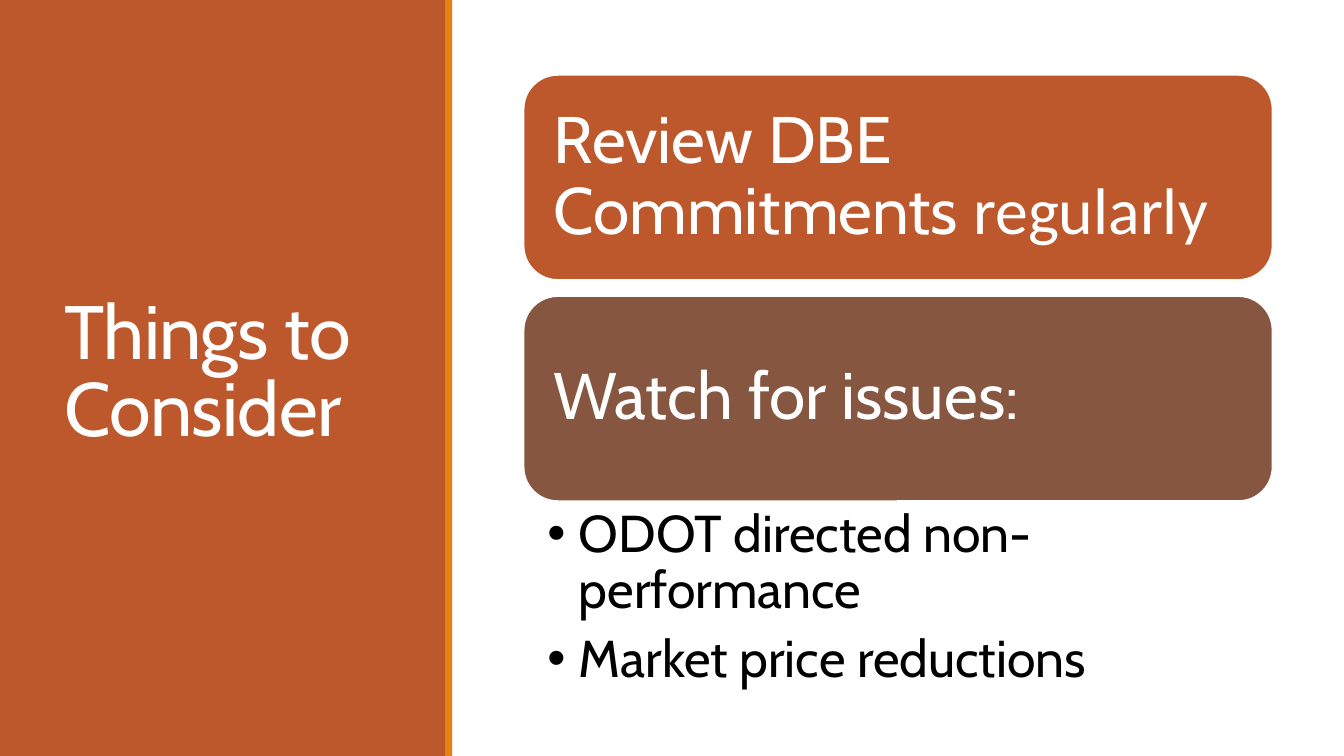
from lxml.etree import SubElement
from pptx import Presentation
from pptx.dml.color import RGBColor
from pptx.enum.shapes import MSO_SHAPE as Shape
from pptx.enum.text import MSO_ANCHOR as Anchor, MSO_AUTO_SIZE as AutoSize, PP_ALIGN as Align
from pptx.oxml.ns import qn
from pptx.util import Pt

TITLE = "Things to Consider"
CARDS = [
    ("BD582C", [("Review DBE Commitments ", "Cabin"), ("regularly", "Calibri")]),
    ("865640", [("Watch for issues:", "Cabin")]),
]
ISSUES = ["ODOT directed non-performance", "Market price reductions"]

SLIDE_WIDTH, SLIDE_HEIGHT = 960, 540
PANEL_WIDTH, STRIPE_LEFT, STRIPE_WIDTH = 319, 318, 5
CARD_LEFT, CARD_TOP, CARD_WIDTH, CARD_HEIGHT = 374, 53.5, 535, 146.5
CARD_PITCH = 158
ISSUES_HEIGHT = 134
INDENT = 22.5


def color(value):
    return RGBColor.from_string(value)


def add_block(slide, kind, box, fill, line=None):
    shape = slide.shapes.add_shape(kind, *map(Pt, box))
    shape.shadow.inherit = False
    shape.fill.solid()
    shape.fill.fore_color.rgb = color(fill)
    if line:
        shape.line.color.rgb = color(line)
        shape.line.width = Pt(1.25)
    else:
        shape.line.fill.background()
    return shape


def set_frame(frame, anchor, insets):
    frame.word_wrap = True
    frame.auto_size = AutoSize.NONE
    frame.vertical_anchor = anchor
    frame.margin_left, frame.margin_top, frame.margin_right, frame.margin_bottom = map(Pt, insets)


def format_run(run, size, fill, name="Cabin"):
    run.font.size = Pt(size)
    run.font.name = name
    run.font.color.rgb = color(fill)


def add_bullet(paragraph):
    properties = paragraph._p.get_or_add_pPr()
    properties.set("marL", str(Pt(INDENT)))
    properties.set("indent", str(-Pt(INDENT)))
    SubElement(properties, qn("a:buFont"), typeface="Arial")
    SubElement(properties, qn("a:buChar"), char="•")


def add_title(slide):
    title = slide.shapes.title
    title.left, title.top, title.width, title.height = map(Pt, (39, 41, 243, 454))
    set_frame(title.text_frame, Anchor.MIDDLE, (7.2, 3.6, 7.2, 3.6))
    title.text_frame.text = TITLE
    paragraph = title.text_frame.paragraphs[0]
    paragraph.alignment = Align.LEFT
    paragraph.line_spacing = 0.85
    run = paragraph.runs[0]
    format_run(run, 54, "FFFFFF")
    run.font._element.set("spc", "-50")
    return title


def add_card(slide, top, fill, parts):
    card = add_block(slide, Shape.ROUNDED_RECTANGLE,
                     (CARD_LEFT, top, CARD_WIDTH, CARD_HEIGHT), fill, "FFFFFF")
    set_frame(card.text_frame, Anchor.MIDDLE, (14.4,) * 4)
    paragraph = card.text_frame.paragraphs[0]
    paragraph.alignment = Align.LEFT
    paragraph.line_spacing = 0.9
    for text, name in parts:
        run = paragraph.add_run()
        run.text = text
        format_run(run, 47, "FFFFFF", name)


def add_issues(slide, top):
    box = slide.shapes.add_textbox(*map(Pt, (CARD_LEFT, top, CARD_WIDTH, ISSUES_HEIGHT)))
    set_frame(box.text_frame, Anchor.TOP, (17, 5, 26.5, 5))
    box.text_frame.text = "\n".join(ISSUES)
    for paragraph in box.text_frame.paragraphs:
        paragraph.level = 1
        paragraph.line_spacing = 0.9
        paragraph.space_after = Pt(9)
        add_bullet(paragraph)
        format_run(paragraph.runs[0], 37, "000000")


def main():
    presentation = Presentation()
    presentation.slide_width = Pt(SLIDE_WIDTH)
    presentation.slide_height = Pt(SLIDE_HEIGHT)
    slide = presentation.slides.add_slide(presentation.slide_layouts[5])

    title = add_title(slide)
    panel = add_block(slide, Shape.RECTANGLE, (0, 0, PANEL_WIDTH, SLIDE_HEIGHT), "BD582C")
    title.element.addprevious(panel.element)
    add_block(slide, Shape.RECTANGLE, (STRIPE_LEFT, 0, STRIPE_WIDTH, SLIDE_HEIGHT), "E48312")

    for index, (fill, parts) in enumerate(CARDS):
        add_card(slide, CARD_TOP + index * CARD_PITCH, fill, parts)
    add_issues(slide, CARD_TOP + (len(CARDS) - 1) * CARD_PITCH + CARD_HEIGHT)

    presentation.save("out.pptx")


if __name__ == "__main__":
    main()
